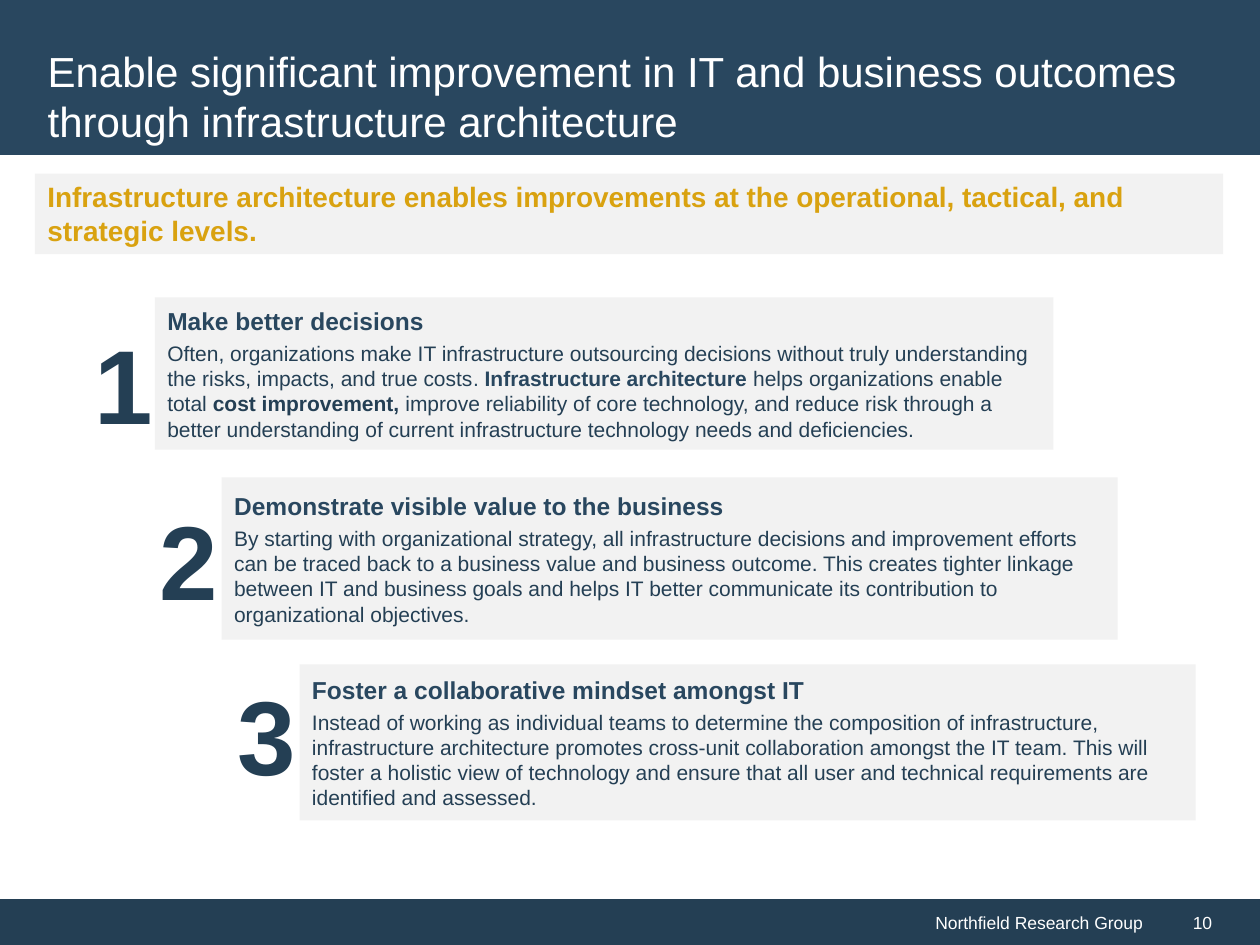
import pptx
import pptx.dml.color
import pptx.enum.shapes
import pptx.enum.text
import pptx.util

Pt = pptx.util.Pt
RGBColor = pptx.dml.color.RGBColor
ANCHOR = pptx.enum.text.MSO_ANCHOR
ALIGN = pptx.enum.text.PP_ALIGN

NAVY = RGBColor(0x24, 0x3F, 0x54)
BLUE = RGBColor(0x29, 0x47, 0x5F)
GREY = RGBColor(0xF2, 0xF2, 0xF2)
GOLD = RGBColor(0xD9, 0xA2, 0x10)
WHITE = RGBColor(0xFF, 0xFF, 0xFF)
FONT = "Arial"

# Each card: number, box, number box, heading, space after the body,
# and body runs as (text, colour, bold)
CARDS = [
    ("1", (88.5, 170, 513.5, 87), (46.8, 179.3, 66, 110),
     "Make better decisions", 3, [
         ("Often, organizations make IT infrastructure outsourcing decisions "
          "without truly understanding the risks, impacts, and true costs", NAVY, False),
         (". ", BLUE, False),
         ("Infrastructure architecture ", BLUE, True),
         ("helps organizations enable total ", NAVY, False),
         ("cost improvement, ", NAVY, True),
         ("improve reliability of core technology, and reduce risk through a better "
          "understanding of current infrastructure technology needs and deficiencies.",
          NAVY, False)]),
    ("2", (126.7, 272.8, 512, 92.8), (84.2, 279.4, 66, 108),
     "Demonstrate visible value to the business", 6, [
         ("By starting with organizational strategy, all infrastructure decisions and "
          "improvement efforts can be traced back to a business value and business "
          "outcome. This creates tighter linkage between IT and business goals and helps "
          "IT better communicate its contribution to organizational objectives.",
          NAVY, False)]),
    ("3", (171.2, 379.6, 512, 89.2), (128.9, 379.4, 66, 98),
     "Foster a collaborative mindset amongst IT", 6, [
         ("Instead of working as individual teams to determine the composition of "
          "infrastructure, infrastructure architecture promotes cross-unit collaboration "
          "amongst the IT team. This will foster a holistic view of technology and ensure "
          "that all user and technical requirements are identified and assessed.",
          NAVY, False)]),
]


def add_run(p, text, size, color, bold=False):
    r = p.add_run()
    r.text = text
    r.font.name = FONT
    r.font.size = Pt(size)
    r.font.bold = bold
    r.font.color.rgb = color


def add_panel(shapes, box, fill, anchor=ANCHOR.MIDDLE):
    """Plain filled rectangle with left-aligned text."""
    sp = shapes.add_shape(pptx.enum.shapes.MSO_SHAPE.RECTANGLE, *map(Pt, box))
    sp.shadow.inherit = False
    sp.fill.solid()
    sp.fill.fore_color.rgb = fill
    sp.line.fill.background()
    tf = sp.text_frame
    tf.word_wrap = True
    tf.vertical_anchor = anchor
    tf.paragraphs[0].alignment = ALIGN.LEFT
    return sp


def add_title(s, text):
    band = add_panel(s.shapes, (0, 0, 720, 88.6), BLUE)
    title = s.shapes.title
    band._element.addnext(title._element)  # title in front of its band
    title.left, title.top, title.width, title.height = map(Pt, (20, 20, 679, 69))
    tf = title.text_frame
    tf.auto_size = pptx.enum.text.MSO_AUTO_SIZE.NONE
    tf.vertical_anchor = ANCHOR.MIDDLE
    p = tf.paragraphs[0]
    p.alignment = ALIGN.LEFT
    add_run(p, text, 24, WHITE)


def add_footer(s, name, page):
    for text, left, width, align in ((name, 0, 660, ALIGN.RIGHT),
                                     (page, 660, 60, ALIGN.LEFT)):
        sp = add_panel(s.shapes, (left, 513.8, width, 26.2), NAVY)
        p = sp.text_frame.paragraphs[0]
        p.alignment = align
        if align == ALIGN.LEFT:
            sp.text_frame.margin_left = Pt(21.6)
        add_run(p, text, 10, WHITE)


def add_card(s, number, box, number_box, heading, space_after, body):
    group = s.shapes.add_group_shape()
    tf = add_panel(group.shapes, box, GREY).text_frame
    p = tf.paragraphs[0]
    p.space_after = Pt(3)
    add_run(p, heading, 14, BLUE, True)
    p = tf.add_paragraph()
    p.alignment = ALIGN.LEFT
    p.space_after = Pt(space_after)
    for text, color, bold in body:
        add_run(p, text, 12, color, bold)

    # Large number at the card's left
    tf = group.shapes.add_textbox(*map(Pt, number_box)).text_frame
    tf.word_wrap = True
    add_run(tf.paragraphs[0], number, 60, NAVY, True)


def main():
    prs = pptx.Presentation()
    prs.slide_width, prs.slide_height = Pt(720), Pt(540)
    s = prs.slides.add_slide(prs.slide_layouts[5])

    # Footer and title
    add_footer(s, "Northfield Research Group", "10")
    add_title(s, "Enable significant improvement in IT and business outcomes "
                 "through infrastructure architecture")

    # Key message
    sp = add_panel(s.shapes, (20, 99.2, 679, 46), GREY, ANCHOR.TOP)
    add_run(sp.text_frame.paragraphs[0],
            "Infrastructure architecture enables improvements at the operational, "
            "tactical, and strategic levels.", 16, GOLD, True)

    # Numbered cards
    for card in CARDS:
        add_card(s, *card)

    prs.save("out.pptx")


if __name__ == "__main__":
    main()
